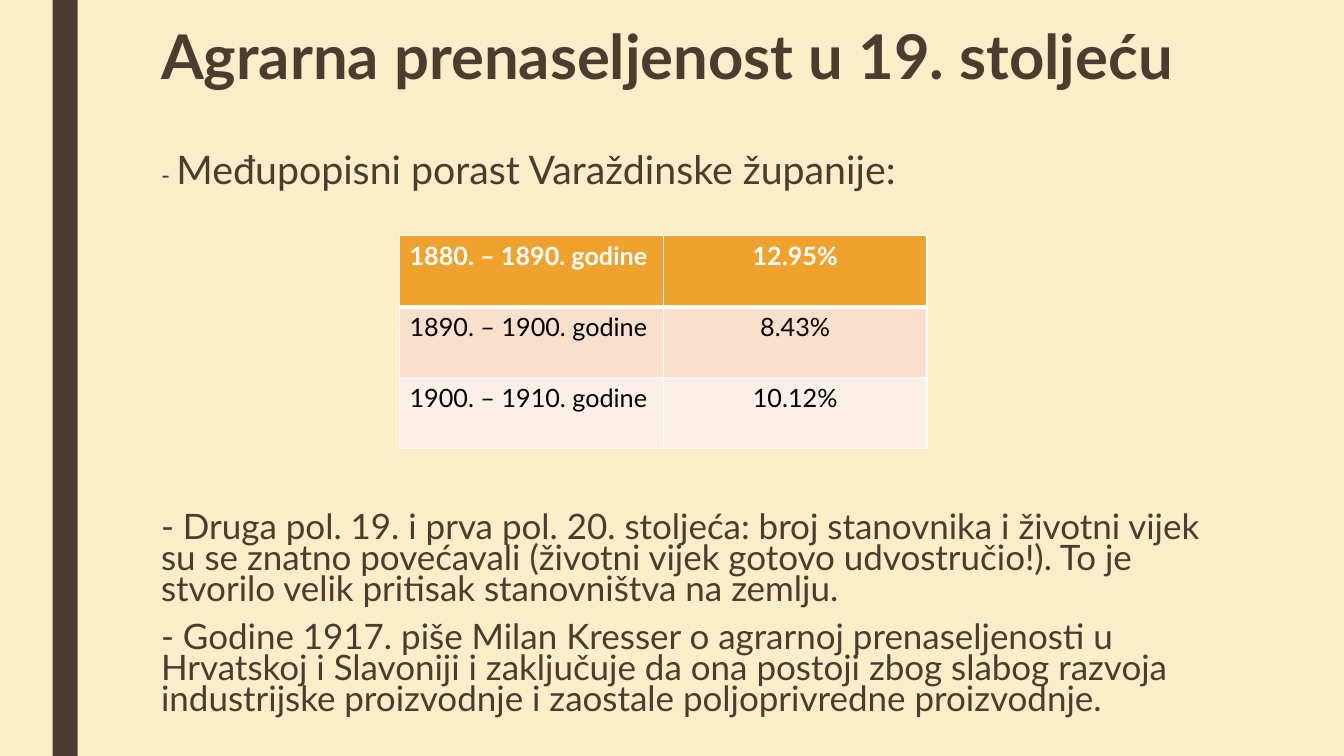
from pptx import Presentation
from pptx.dml.color import RGBColor
from pptx.enum.shapes import MSO_SHAPE
from pptx.enum.text import PP_ALIGN
from pptx.oxml import parse_xml
from pptx.oxml.ns import nsdecls
from pptx.util import Pt

BROWN, WHITE, BLACK = "4E3B30", "FFFFFF", "000000"


def color(text):
    return RGBColor.from_string(text)


def add_run(para, text, size, tone, bold=False):
    run = para.add_run()
    run.text = text
    run.font.name = "Lato"
    run.font.size = Pt(size)
    run.font.bold = bold
    run.font.color.rgb = color(tone)


deck = Presentation()
deck.slide_width, deck.slide_height = Pt(960), Pt(540)
slide = deck.slides.add_slide(deck.slide_layouts[6])
slide.background.fill.solid()
slide.background.fill.fore_color.rgb = color("FBEEC9")

bar = slide.shapes.add_shape(MSO_SHAPE.RECTANGLE, Pt(37.5), 0, Pt(18), Pt(540))
bar.shadow.inherit = False
bar.fill.solid()
bar.fill.fore_color.rgb = color(BROWN)
bar.line.fill.background()

# Title, lead line and closing points: top, height, line spacing, bold, paragraphs of runs
blocks = [
    (15.8, 56, 0.89, True, [[("Agrarna prenaseljenost u 19. stoljeću", 44)]]),
    (108, 36, 0.74, False, [[("- ", 17.5), ("Međupopisni porast Varaždinske županije:", 28.1)]]),
    (364, 156, 0.74, False, [
        [("- Druga pol. 19. i prva pol. 20. stoljeća: broj stanovnika i životni vijek "
          "su se znatno povećavali (životni vijek gotovo udvostručio!). To je stvorilo "
          "velik pritisak stanovništva na zemlju.", 25)],
        [("- Godine 1917. piše Milan Kresser o agrarnoj prenaseljenosti u Hrvatskoj i "
          "Slavoniji i zaključuje da ona postoji zbog slabog razvoja industrijske "
          "proizvodnje i zaostale poljoprivredne proizvodnje.", 25)],
    ]),
]
for top, height, spacing, bold, paras in blocks:
    frame = slide.shapes.add_textbox(Pt(108), Pt(top), Pt(756), Pt(height)).text_frame
    frame.word_wrap = True
    for i, runs in enumerate(paras):
        para = frame.add_paragraph() if i else frame.paragraphs[0]
        para.line_spacing = spacing
        para.space_before = Pt(12 if i else 0)
        for text, size in runs:
            add_run(para, text, size, BROWN, bold)

# Growth between censuses
growth = [
    ("1880. – 1890. godine", "12.95%", "F0A22E"),
    ("1890. – 1900. godine", "8.43%", "F9E0CD"),
    ("1900. – 1910. godine", "10.12%", "FCF0E8"),
]
table = slide.shapes.add_table(3, 2, Pt(285.4), Pt(168.4), Pt(376.8), Pt(152.1)).table
for col in table.columns:
    col.width = Pt(188.4)
for r, (years, rate, tint) in enumerate(growth):
    table.rows[r].height = Pt(50.7)
    for c, text in enumerate((years, rate)):
        cell = table.cell(r, c)
        para = cell.text_frame.paragraphs[0]
        para.alignment = PP_ALIGN.CENTER if c else PP_ALIGN.LEFT
        add_run(para, text, 18, BLACK if r else WHITE, r == 0)
        props = cell._tc.get_or_add_tcPr()
        for side in "LRTB":
            thick = (r, side) in ((0, "B"), (1, "T"))
            props.append(parse_xml(
                f'<a:ln{side} {nsdecls("a")} w="{Pt(3 if thick else 1)}"><a:solidFill>'
                f'<a:srgbClr val="{WHITE}"/></a:solidFill></a:ln{side}>'))
        cell.fill.solid()
        cell.fill.fore_color.rgb = color(tint)

deck.save("out.pptx")
